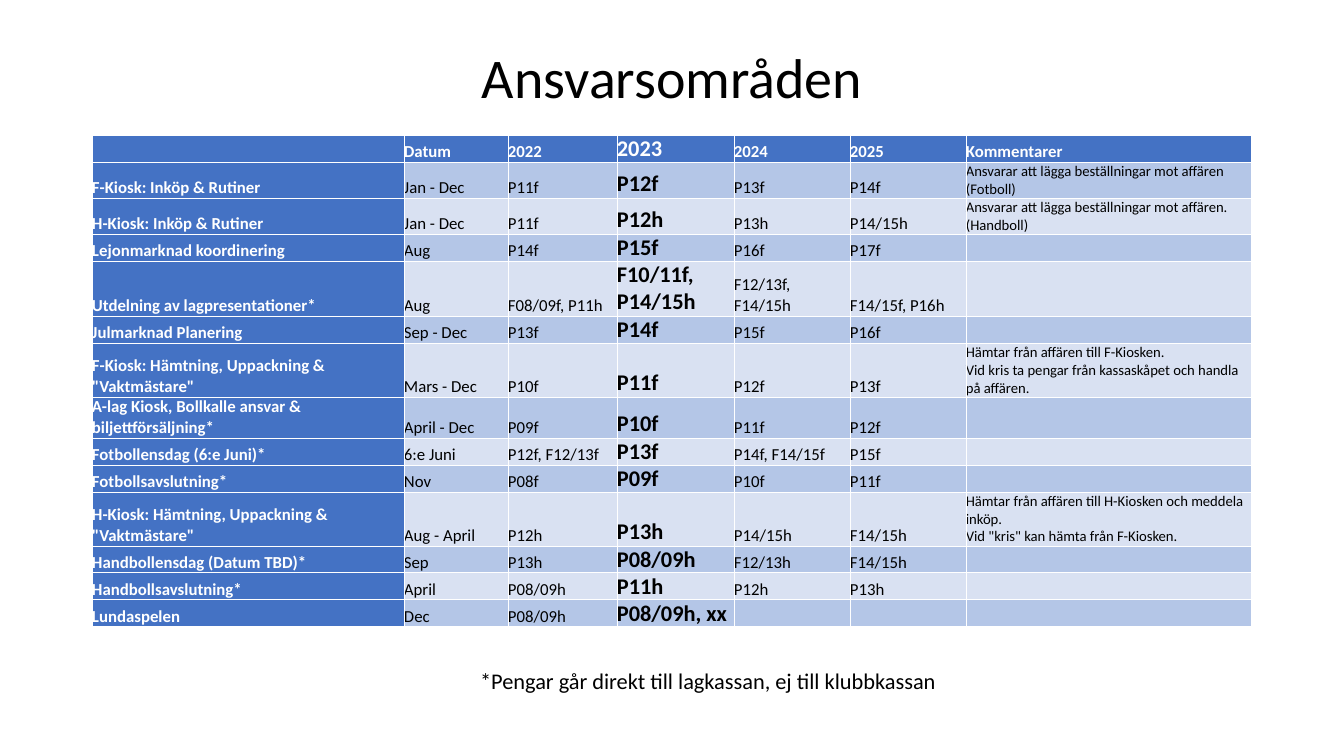
import lxml.etree
import pptx
import pptx.dml.color
import pptx.enum.text
import pptx.oxml.ns
import pptx.util

RGBColor = pptx.dml.color.RGBColor
ANCHOR = pptx.enum.text.MSO_ANCHOR
CENTER = pptx.enum.text.PP_ALIGN.CENTER
qn = pptx.oxml.ns.qn

BLACK = RGBColor(0x00, 0x00, 0x00)
WHITE = RGBColor(0xFF, 0xFF, 0xFF)
HEADING_BLUE = RGBColor(0x44, 0x72, 0xC4)
BAND_DARK = RGBColor(0xB4, 0xC6, 0xE7)
BAND_LIGHT = RGBColor(0xD9, 0xE1, 0xF2)
FONT = "Calibri"
EMU_PER_PX = 12192000 / 1344

CURRENT_YEAR_COLUMN = 3
COMMENT_COLUMN = 6
COLUMN_WIDTHS = [312, 104, 109, 117, 116, 116, 285]
ROW_HEIGHTS = [27, 36, 36, 27, 55, 27, 54, 41, 27, 27, 54, 27, 27, 27]
DUTIES = [
    ["", "Datum", "2022", "2023", "2024", "2025", "Kommentarer"],
    ["F-Kiosk: Inköp & Rutiner", "Jan - Dec", "P11f", "P12f", "P13f", "P14f",
     "Ansvarar att lägga beställningar mot affären (Fotboll)"],
    ["H-Kiosk: Inköp & Rutiner", "Jan - Dec", "P11f", "P12h", "P13h", "P14/15h",
     "Ansvarar att lägga beställningar mot affären. (Handboll)"],
    ["Lejonmarknad koordinering", "Aug", "P14f", "P15f", "P16f", "P17f", ""],
    ["Utdelning av lagpresentationer*", "Aug", "F08/09f, P11h", "F10/11f, P14/15h",
     "F12/13f, F14/15h", "F14/15f, P16h", ""],
    ["Julmarknad Planering", "Sep - Dec", "P13f", "P14f", "P15f", "P16f", ""],
    ['F-Kiosk: Hämtning, Uppackning & "Vaktmästare"', "Mars - Dec",
     "P10f", "P11f", "P12f", "P13f",
     "Hämtar från affären till F-Kiosken.\v"
     "Vid kris ta pengar från kassaskåpet och handla på affären."],
    ["A-lag Kiosk, Bollkalle ansvar & biljettförsäljning*", "April - Dec",
     "P09f", "P10f", "P11f", "P12f", ""],
    ["Fotbollensdag (6:e Juni)*", "6:e Juni", "P12f, F12/13f", "P13f",
     "P14f, F14/15f", "P15f", ""],
    ["Fotbollsavslutning*", "Nov", "P08f", "P09f", "P10f", "P11f", ""],
    ['H-Kiosk: Hämtning, Uppackning & "Vaktmästare"', "Aug - April",
     "P12h", "P13h", "P14/15h", "F14/15h",
     "Hämtar från affären till H-Kiosken och meddela inköp.\v"
     'Vid "kris" kan hämta från F-Kiosken.'],
    ["Handbollensdag (Datum TBD)*", "Sep", "P13h", "P08/09h", "F12/13h", "F14/15h", ""],
    ["Handbollsavslutning*", "April", "P08/09h", "P11h", "P12h", "P13h", ""],
    ["Lundaspelen", "Dec", "P08/09h", "P08/09h, xx", "", "", ""],
]


def px(length):
    return pptx.util.Emu(round(length * EMU_PER_PX))


def format_runs(paragraph, size, color, bold=False):
    for run in paragraph.runs:
        run.font.name = FONT
        run.font.size = pptx.util.Pt(size)
        run.font.bold = bold
        run.font.color.rgb = color


def set_centered_line(shape, text, size):
    frame = shape.text_frame
    frame.text = text
    frame.word_wrap = True
    frame.vertical_anchor = ANCHOR.MIDDLE
    line = frame.paragraphs[0]
    line.alignment = CENTER
    line.line_spacing = 0.9
    format_runs(line, size, BLACK)
    return line


def add_title(slide):
    heading = slide.shapes.title
    heading.left, heading.top, heading.width, heading.height = map(px, (111, 19, 1122, 123))
    set_centered_line(heading, "Ansvarsområden", 40)


def add_footnote(slide):
    footnote = slide.shapes.add_textbox(*map(px, (147, 640, 1122, 85)))
    line = set_centered_line(
        footnote, "*Pengar går direkt till lagkassan, ej till klubbkassan", 16)
    line.space_before = pptx.util.Pt(10)


def add_borders(cell):
    properties = cell._tc.get_or_add_tcPr()
    for position, side in enumerate(("lnL", "lnR", "lnT", "lnB")):
        border = lxml.etree.Element(qn(f"a:{side}"), w=str(pptx.util.Pt(0.5)))
        fill = lxml.etree.SubElement(border, qn("a:solidFill"))
        lxml.etree.SubElement(fill, qn("a:srgbClr"), val=str(WHITE))
        properties.insert(position, border)


def fill_cell(cell, text, row, column):
    is_heading = row == 0 or column == 0
    is_current_year = column == CURRENT_YEAR_COLUMN
    if is_current_year:
        size = 16
    elif column == COMMENT_COLUMN and row > 0:
        size = 10.5
    else:
        size = 12

    cell.margin_left = cell.margin_right = cell.margin_top = cell.margin_bottom = 0
    cell.vertical_anchor = ANCHOR.BOTTOM
    cell.fill.solid()
    band = BAND_DARK if row % 2 else BAND_LIGHT
    cell.fill.fore_color.rgb = HEADING_BLUE if is_heading else band
    add_borders(cell)

    cell.text_frame.text = text
    line = cell.text_frame.paragraphs[0]
    format_runs(line, size, WHITE if is_heading else BLACK, is_heading or is_current_year)
    if not text:
        # Keeps an empty cell from stretching its row
        lxml.etree.SubElement(line._p, qn("a:endParaRPr"), sz=str(round(size * 100)))


def add_duty_table(slide):
    duties = slide.shapes.add_table(
        len(DUTIES), len(COLUMN_WIDTHS), px(92), px(135),
        px(sum(COLUMN_WIDTHS)), px(sum(ROW_HEIGHTS))).table
    for column, width in zip(duties.columns, COLUMN_WIDTHS):
        column.width = px(width)
    for row, height in zip(duties.rows, ROW_HEIGHTS):
        row.height = px(height)
    for row, texts in enumerate(DUTIES):
        for column, text in enumerate(texts):
            fill_cell(duties.cell(row, column), text, row, column)


def main():
    presentation = pptx.Presentation()
    presentation.slide_width = px(1344)
    presentation.slide_height = px(756)
    # Layout 5 is title only
    slide = presentation.slides.add_slide(presentation.slide_layouts[5])
    add_title(slide)
    add_footnote(slide)
    add_duty_table(slide)
    presentation.save("out.pptx")


if __name__ == "__main__":
    main()
